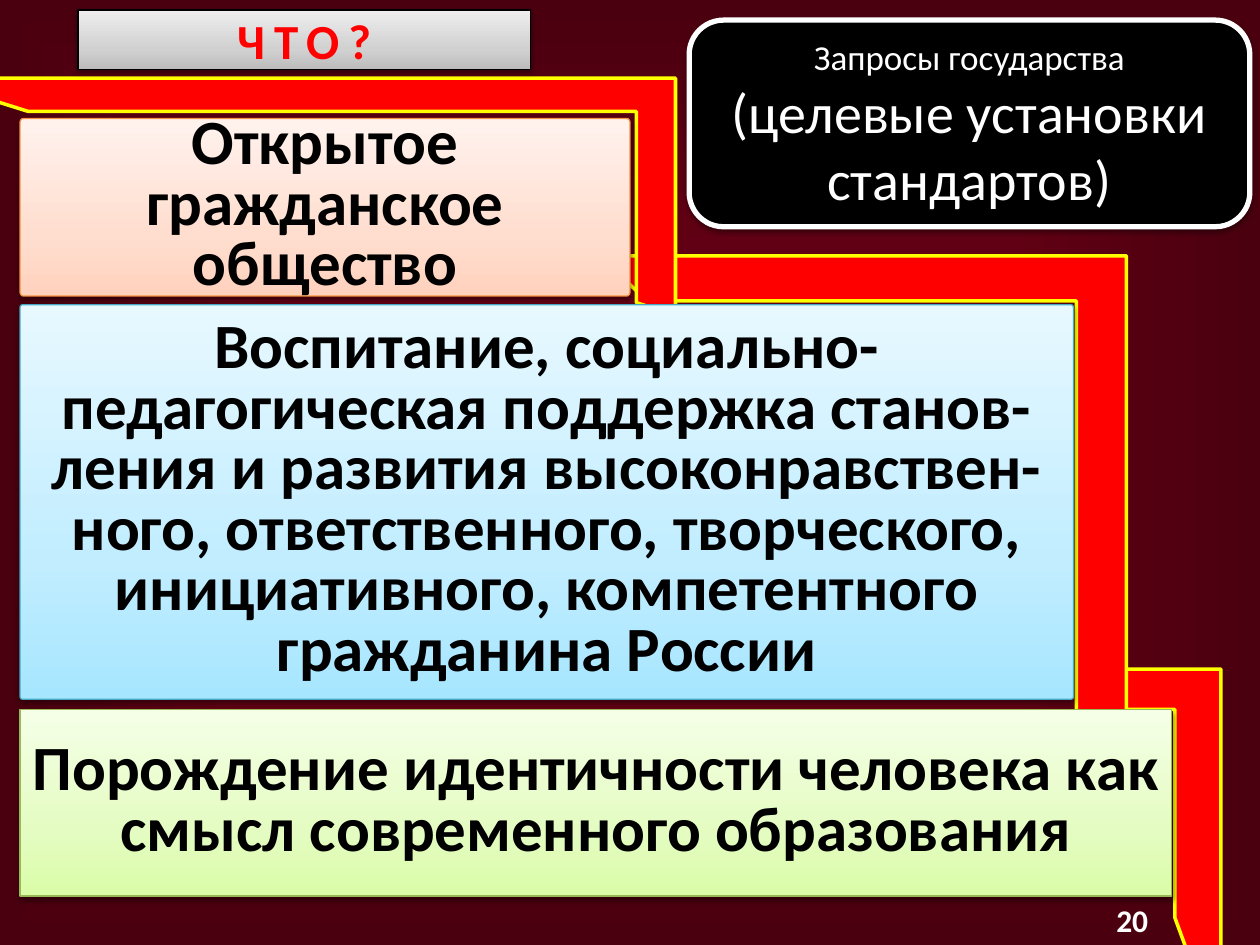
from copy import deepcopy

from lxml import etree
from pptx import Presentation
from pptx.dml.color import RGBColor
from pptx.enum.shapes import MSO_SHAPE
from pptx.enum.text import MSO_ANCHOR, PP_ALIGN
from pptx.oxml.ns import qn
from pptx.util import Pt

RECT = MSO_SHAPE.RECTANGLE
ROUND = MSO_SHAPE.ROUNDED_RECTANGLE
HALF_FRAME = MSO_SHAPE.HALF_FRAME
MIDDLE = MSO_ANCHOR.MIDDLE
CENTER = PP_ALIGN.CENTER
RIGHT = PP_ALIGN.RIGHT

BLACK = RGBColor(0x00, 0x00, 0x00)
WHITE = RGBColor(0xFF, 0xFF, 0xFF)
RED = RGBColor(0xFF, 0x00, 0x00)
YELLOW = RGBColor(0xFF, 0xFF, 0x00)
BG_CENTER = RGBColor(0x76, 0x00, 0x18)
BG_EDGE = RGBColor(0x4A, 0x00, 0x0F)
GREENS = [RGBColor(0xDA, 0xFD, 0xA7), RGBColor(0xE4, 0xFC, 0xC2), RGBColor(0xF5, 0xFF, 0xE7)]
ORANGES = [RGBColor(0xFF, 0xD2, 0xBD), RGBColor(0xFF, 0xDE, 0xD0), RGBColor(0xFF, 0xF2, 0xED)]
BLUES = [RGBColor(0xA7, 0xE6, 0xFF), RGBColor(0xC1, 0xED, 0xFF), RGBColor(0xE7, 0xF8, 0xFF)]
GREYS = [RGBColor(0xBD, 0xBD, 0xBD), RGBColor(0xD1, 0xD1, 0xD1), RGBColor(0xEE, 0xEE, 0xEE)]
GREEN_LINE = RGBColor(0x98, 0xB9, 0x55)
ORANGE_LINE = RGBColor(0xF6, 0x92, 0x40)
BLUE_LINE = RGBColor(0x46, 0xAA, 0xC5)


def add_box(kind, box, colors, line, width, shadow=True):
    """Add a shape; three colors make a gradient rising from the bottom edge."""
    sp = s.shapes.add_shape(kind, *map(Pt, box))
    if len(colors) == 1:
        sp.fill.solid()
        sp.fill.fore_color.rgb = colors[0]
    else:
        sp.fill.gradient()
        sp.fill.gradient_angle = 90
        stop_list = sp._element.spPr.find(".//" + qn("a:gsLst"))
        stop_list.append(deepcopy(stop_list[0]))
        for stop, color, position in zip(sp.fill.gradient_stops, colors, (0, 0.35, 1)):
            stop.color.rgb = color
            stop.position = position
    sp.line.color.rgb = line
    sp.line.width = Pt(width)
    sp.shadow.inherit = False
    if shadow:
        effects = sp._element.spPr.find(qn("a:effectLst"))
        outer = etree.SubElement(effects, qn("a:outerShdw"), blurRad=str(Pt(3.1)),
                                 dist=str(Pt(1.6)), dir="5400000", rotWithShape="0")
        color = etree.SubElement(outer, qn("a:srgbClr"), val="000000")
        etree.SubElement(color, qn("a:alpha"), val="38000")
    return sp


def write(sp, text, size, color, bold=True, align=CENTER):
    tf = sp.text_frame
    tf.word_wrap = True
    tf.vertical_anchor = MIDDLE
    p = tf.paragraphs[0]
    p.alignment = align
    p.font.name = "Calibri"
    p.font.size = Pt(size)
    p.font.bold = bold
    p.font.color.rgb = color
    r = p.add_run()
    r.text = text
    return p


prs = Presentation()
prs.slide_width, prs.slide_height = Pt(720), Pt(540)
s = prs.slides.add_slide(prs.slide_layouts[6])

# Background fading from the centre to darker edges
fill = s.background.fill
fill.gradient()
for stop, color in zip(fill.gradient_stops, (BG_CENTER, BG_EDGE)):
    stop.color.rgb = color
grad = s._element.find(".//" + qn("a:gradFill"))
grad.remove(grad.find(qn("a:lin")))
grad_path = etree.SubElement(grad, qn("a:path"), path="rect")
etree.SubElement(grad_path, qn("a:fillToRect"), l="50000", t="50000", r="50000", b="50000")

# State requests
sp = add_box(ROUND, (393.8, 11.5, 320.4, 118.1), [BLACK], WHITE, 3)
p = write(sp, "Запросы государства ", 32, WHITE, bold=False)
p.runs[0].font.size = Pt(20)
p.add_run().text = "(целевые установки стандартов)"

# Red corners behind the steps, lowest first
for box, thickness, arm in (
    ((551.5, 450, 213.8, 78.5), 0.336, 0.294),
    ((349.9, 139, 286.6, 301), 0.1, 0.09),
    ((103, -103, 135.4, 430.6), 0.165, 0.141),
):
    sp = add_box(HALF_FRAME, box, [RED], YELLOW, 2, shadow=False)
    sp.rotation = 90
    sp.adjustments[0] = thickness
    sp.adjustments[1] = arm

# Steps
for top, width, height, radius, colors, line, text in (
    (405.4, 658.1, 106.6, 0, GREENS, GREEN_LINE,
     "Порождение идентичности человека как смысл современного образования"),
    (67.7, 348.5, 101.5, 0.02, ORANGES, ORANGE_LINE,
     "Открытое гражданское общество"),
    (174.2, 601.9, 225.4, 0.006, BLUES, BLUE_LINE,
     "Воспитание, социально-педагогическая поддержка станов-ления и развития "
     "высоконравствен-ного, ответственного, творческого, инициативного, "
     "компетентного гражданина России"),
):
    sp = add_box(ROUND, (11.5, top, width, height), colors, line, 0.75)
    sp.adjustments[0] = radius
    sp.text_frame.margin_left = sp.text_frame.margin_right = Pt(6)
    write(sp, text, 36, BLACK).line_spacing = 0.8

# Title
sp = add_box(RECT, (44.6, 5.8, 258.5, 33.8), GREYS, BLACK, 0.75)
p = write(sp, "ЧТО?", 28, RED)
p.runs[0].font._element.set("spc", "520")

# Slide number
sp = s.shapes.add_textbox(Pt(495.4), Pt(511.2), Pt(167.8), Pt(28.8))
write(sp, "20", 18, WHITE, align=RIGHT)

prs.save("out.pptx")
